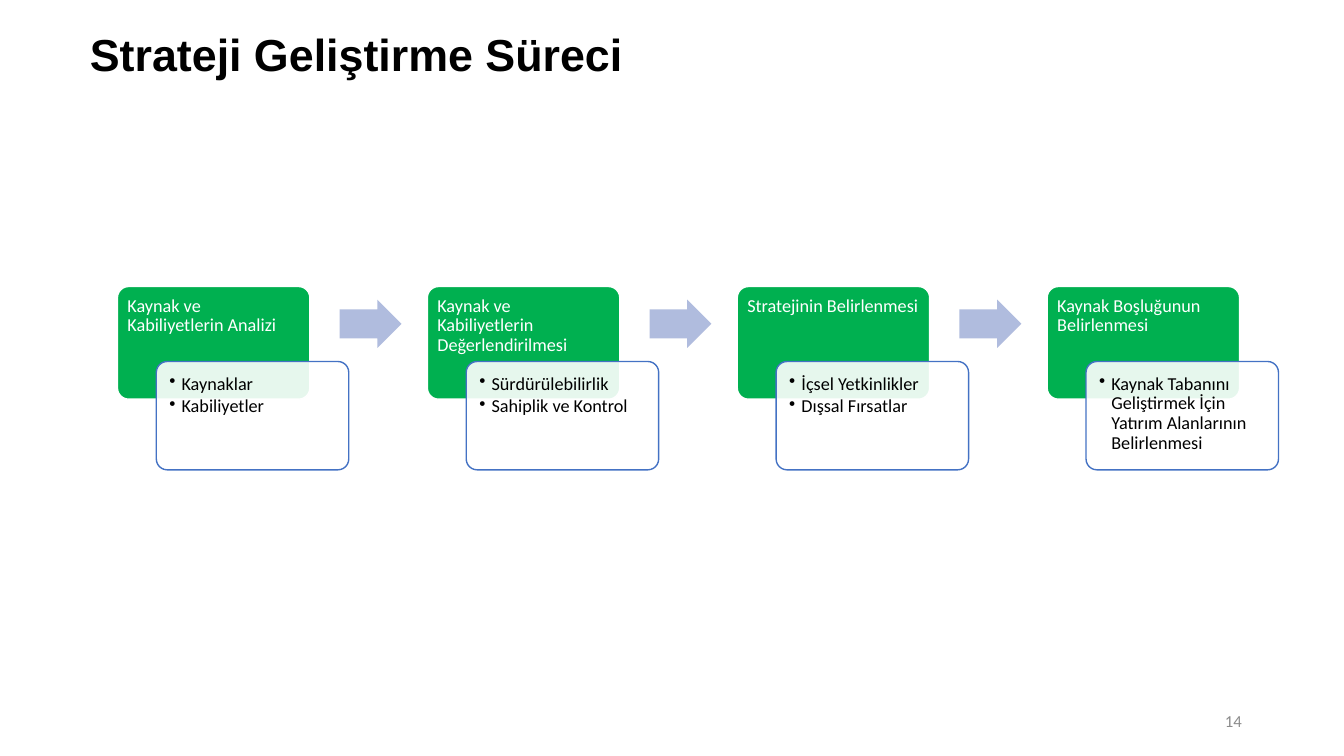
from dataclasses import dataclass

from lxml.etree import SubElement
from pptx import Presentation
from pptx.dml.color import RGBColor
from pptx.enum.shapes import MSO_SHAPE
from pptx.enum.text import MSO_ANCHOR, MSO_AUTO_SIZE, PP_ALIGN
from pptx.oxml.ns import qn
from pptx.util import Cm, Pt

COLORS = {
    "white": "FFFFFF",
    "black": "000000",
    "green": "00B050",
    "blue": "4472C4",
    "arrow": "B0BCDE",
    "gray": "8C8C8C",
}
FIRST_LEFT, STAGE_PITCH = 2.96, 7.81
CARD_WIDTH = 4.85


@dataclass(frozen=True)
class Stage:
    heading: str
    details: tuple[str, ...]


@dataclass(frozen=True)
class Card:
    """Look and place of one kind of rounded card, in centimetres and points."""

    shift: float
    top: float
    height: float
    fill: str
    line: str
    text: str
    inset: float
    space_after: float


HEADING_CARD = Card(0, 7.22, 2.84, "green", "white", "white", 0.17, 4.5)
DETAIL_CARD = Card(0.98, 9.11, 2.73, "white", "blue", "black", 0.25, 2)

STAGES = (
    Stage("Kaynak ve Kabiliyetlerin Analizi", ("Kaynaklar", "Kabiliyetler")),
    Stage("Kaynak ve Kabiliyetlerin Değerlendirilmesi",
          ("Sürdürülebilirlik", "Sahiplik ve Kontrol")),
    Stage("Stratejinin Belirlenmesi", ("İçsel Yetkinlikler", "Dışsal Fırsatlar")),
    Stage("Kaynak Boşluğunun Belirlenmesi",
          ("Kaynak Tabanını Geliştirmek İçin Yatırım Alanlarının Belirlenmesi",)),
)


def rgb(name: str) -> RGBColor:
    return RGBColor.from_string(COLORS[name])


def format_runs(paragraph, size: float, font: str, color: str, bold: bool = False) -> None:
    for run in paragraph.runs:
        run.font.size = Pt(size)
        run.font.name = font
        run.font.bold = bold
        run.font.color.rgb = rgb(color)


def add_bullet(paragraph) -> None:
    properties = paragraph._p.get_or_add_pPr()
    properties.set("marL", str(Cm(0.31)))
    properties.set("indent", str(Cm(-0.31)))
    SubElement(properties, qn("a:buChar")).set("char", "•")


def set_opacity(shape, percent: int) -> None:
    fill_color = shape._element.spPr.find(qn("a:solidFill"))[0]
    SubElement(fill_color, qn("a:alpha")).set("val", str(percent * 1000))


def add_card(slide, card: Card, stage_left: float, lines: tuple[str, ...]):
    shape = slide.shapes.add_shape(
        MSO_SHAPE.ROUNDED_RECTANGLE, Cm(stage_left + card.shift), Cm(card.top),
        Cm(CARD_WIDTH), Cm(card.height))
    shape.adjustments[0] = 0.1
    shape.shadow.inherit = False
    shape.fill.solid()
    shape.fill.fore_color.rgb = rgb(card.fill)
    shape.line.color.rgb = rgb(card.line)
    shape.line.width = Pt(1)

    frame = shape.text_frame
    frame.word_wrap = True
    frame.vertical_anchor = MSO_ANCHOR.TOP
    frame.margin_left = frame.margin_right = Cm(card.inset)
    frame.margin_top = frame.margin_bottom = Cm(card.inset)
    frame.text = "\n".join(lines)
    for paragraph in frame.paragraphs:
        paragraph.alignment = PP_ALIGN.LEFT
        paragraph.line_spacing = 0.9
        paragraph.space_after = Pt(card.space_after)
        format_runs(paragraph, 13, "Calibri", card.text)
    return shape


def add_stage(slide, stage: Stage, left: float) -> None:
    add_card(slide, HEADING_CARD, left, (stage.heading,))
    details = add_card(slide, DETAIL_CARD, left, stage.details)
    set_opacity(details, 90)
    for paragraph in details.text_frame.paragraphs:
        add_bullet(paragraph)


def add_arrow(slide, stage_left: float) -> None:
    arrow = slide.shapes.add_shape(
        MSO_SHAPE.RIGHT_ARROW, Cm(stage_left + 5.6), Cm(7.55), Cm(1.56), Cm(1.22))
    arrow.adjustments[0] = 0.6
    arrow.adjustments[1] = 0.5
    arrow.shadow.inherit = False
    arrow.fill.solid()
    arrow.fill.fore_color.rgb = rgb("arrow")
    arrow.line.fill.background()


def add_title(slide, text: str) -> None:
    title = slide.shapes.title
    title.left, title.top, title.width, title.height = Cm(2.01), Cm(0.69), Cm(21.9), Cm(1.32)
    frame = title.text_frame
    frame.text = text
    frame.auto_size = MSO_AUTO_SIZE.NONE
    frame.vertical_anchor = MSO_ANCHOR.TOP
    heading = frame.paragraphs[0]
    heading.alignment = PP_ALIGN.LEFT
    heading.line_spacing = 0.9
    format_runs(heading, 32, "Arial", "black", bold=True)


def add_page_number(slide, number: str) -> None:
    frame = slide.shapes.add_textbox(Cm(23.93), Cm(17.65), Cm(7.62), Cm(1.02)).text_frame
    frame.word_wrap = True
    frame.vertical_anchor = MSO_ANCHOR.MIDDLE
    frame.text = number
    frame.paragraphs[0].alignment = PP_ALIGN.RIGHT
    format_runs(frame.paragraphs[0], 12, "Calibri", "gray")


def main() -> None:
    presentation = Presentation()
    presentation.slide_width = Cm(33.87)
    presentation.slide_height = Cm(19.05)
    slide = presentation.slides.add_slide(presentation.slide_layouts.get_by_name("Title Only"))

    add_title(slide, "Strateji Geliştirme Süreci")
    for index, stage in enumerate(STAGES):
        left = FIRST_LEFT + index * STAGE_PITCH
        add_stage(slide, stage, left)
        if stage is not STAGES[-1]:
            add_arrow(slide, left)
    add_page_number(slide, "14")

    presentation.save("out.pptx")


if __name__ == "__main__":
    main()
